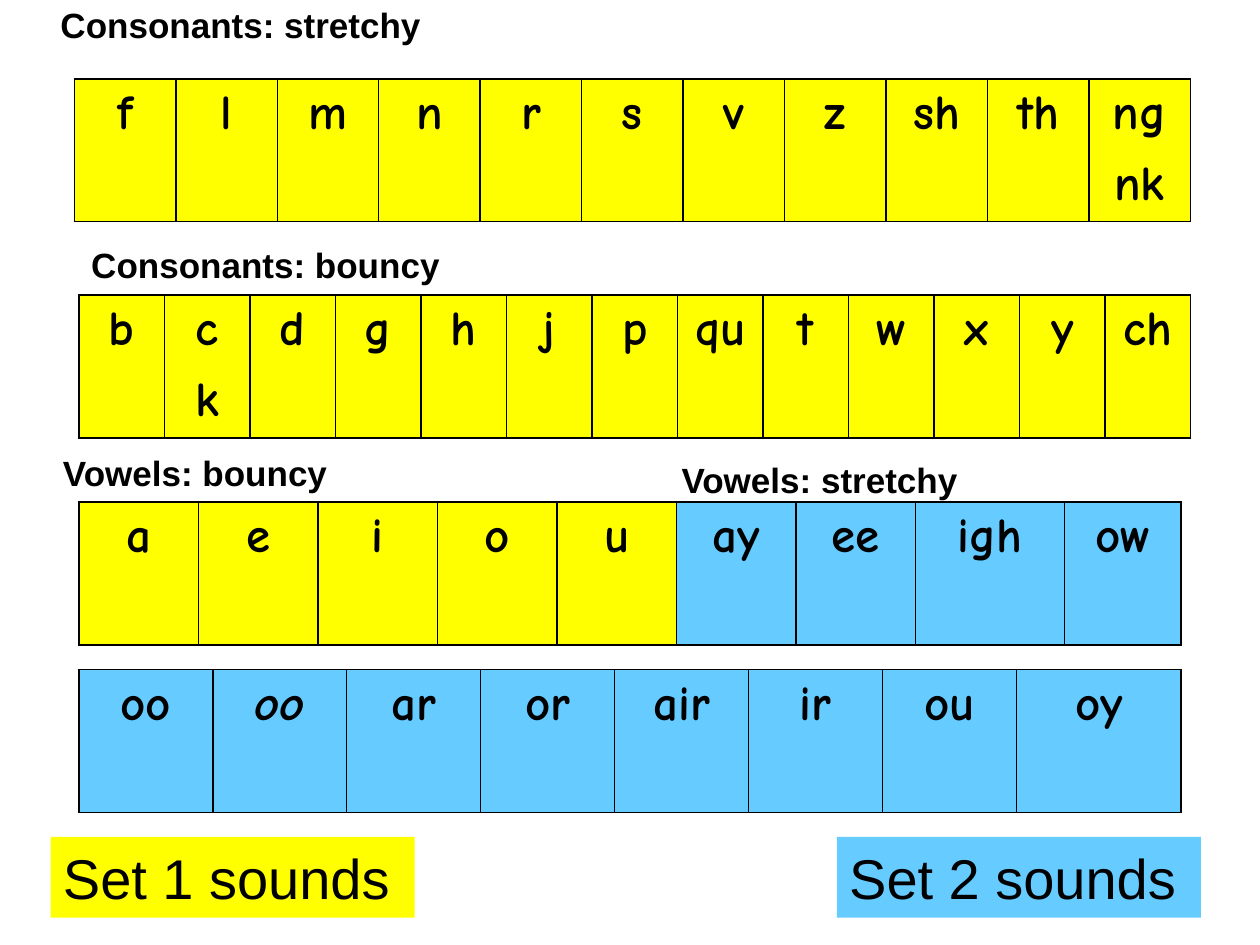
from lxml import etree
from pptx import Presentation
from pptx.dml.color import RGBColor
from pptx.enum.shapes import MSO_SHAPE
from pptx.enum.text import MSO_ANCHOR, PP_ALIGN
from pptx.oxml.ns import qn
from pptx.util import Cm, Pt

YELLOW = RGBColor(0xFF, 0xFF, 0x00)
BLUE = RGBColor(0x66, 0xCC, 0xFF)
BLACK = RGBColor(0x00, 0x00, 0x00)
RECTANGLE = MSO_SHAPE.RECTANGLE
TOP = MSO_ANCHOR.TOP
LEFT = PP_ALIGN.LEFT
CENTER = PP_ALIGN.CENTER
NO_STYLE = "{2D5ABB26-0587-4C30-8999-92F81FD0307C}"
ROW_HEIGHT = 1.44


def write(tf, text, size, font, bold, align):
    p = tf.paragraphs[0]
    p.text = text
    p.alignment = align
    for r in p.runs:
        r.font.size = Pt(size)
        r.font.name = font
        r.font.bold = bold
        r.font.color.rgb = BLACK


def add_border(cell, side):
    ln = etree.SubElement(cell._tc.get_or_add_tcPr(), qn(f"a:{side}"), w=str(Pt(1)))
    fill = etree.SubElement(ln, qn("a:solidFill"))
    etree.SubElement(fill, qn("a:srgbClr"), val=str(BLACK))


prs = Presentation()
prs.slide_width = Cm(25.4)
prs.slide_height = Cm(19.05)
s = prs.slides.add_slide(prs.slide_layouts[6])

sound_tables = [
    (1.5, 1.59, "f l m n r s v z sh th ng", {10: "nk"}, [22.5 / 11] * 11, 11),
    (1.59, 5.95, "b c d g h j p qu t w x y ch", {1: "k"}, [22.42 / 13] * 13, 13),
    (1.59, 10.12, "a e i o u ay ee igh ow", {}, [2.41] * 7 + [3, 2.35], 5),
    (1.59, 13.5, "oo oo ar or air ir ou oy", {}, [2.7] * 7 + [3.32], 0),
]
for left, top, sounds, extras, widths, yellow_count in sound_tables:
    frame = s.shapes.add_table(
        2, len(widths), Cm(left), Cm(top), Cm(sum(widths)), Cm(2 * ROW_HEIGHT)
    )
    table = frame.table
    table.first_row = False
    table.horz_banding = False
    for style in frame.element.iter(qn("a:tableStyleId")):
        style.text = NO_STYLE
    for row in table.rows:
        row.height = Cm(ROW_HEIGHT)
    for col, (sound, width) in enumerate(zip(sounds.split(), widths)):
        table.columns[col].width = Cm(width)
        for row, text in enumerate([sound, extras.get(col, "")]):
            cell = table.cell(row, col)
            for side in ("lnL", "lnR", ("lnT", "lnB")[row]):
                add_border(cell, side)
            cell.fill.solid()
            cell.fill.fore_color.rgb = YELLOW if col < yellow_count else BLUE
            write(cell.text_frame, text, 28, "Comic Neue", True, CENTER)

short_oo = table.cell(0, 1).text_frame.paragraphs[0].runs[0]
short_oo.font.italic = True

for left, text, color in [
    (1.02, "Set 1 sounds", YELLOW),
    (16.87, "Set 2 sounds", BLUE),
]:
    sp = s.shapes.add_shape(RECTANGLE, Cm(left), Cm(16.87), Cm(7.34), Cm(1.63))
    sp.shadow.inherit = False
    sp.fill.solid()
    sp.fill.fore_color.rgb = color
    sp.line.fill.background()
    sp.text_frame.vertical_anchor = TOP
    write(sp.text_frame, text, 32, "Arial", False, LEFT)

for left, top, width, text in [
    (0.97, -0.05, 8.33, "Consonants: stretchy"),
    (13.49, 9.12, 9.93, "Vowels: stretchy"),
    (1.59, 4.78, 8.33, "Consonants: bouncy"),
    (1.02, 8.97, 9.93, "Vowels: bouncy"),
]:
    sp = s.shapes.add_textbox(Cm(left), Cm(top), Cm(width), Cm(1.12))
    sp.text_frame.word_wrap = True
    write(sp.text_frame, text, 20, "Arial", True, LEFT)

prs.save("out.pptx")
